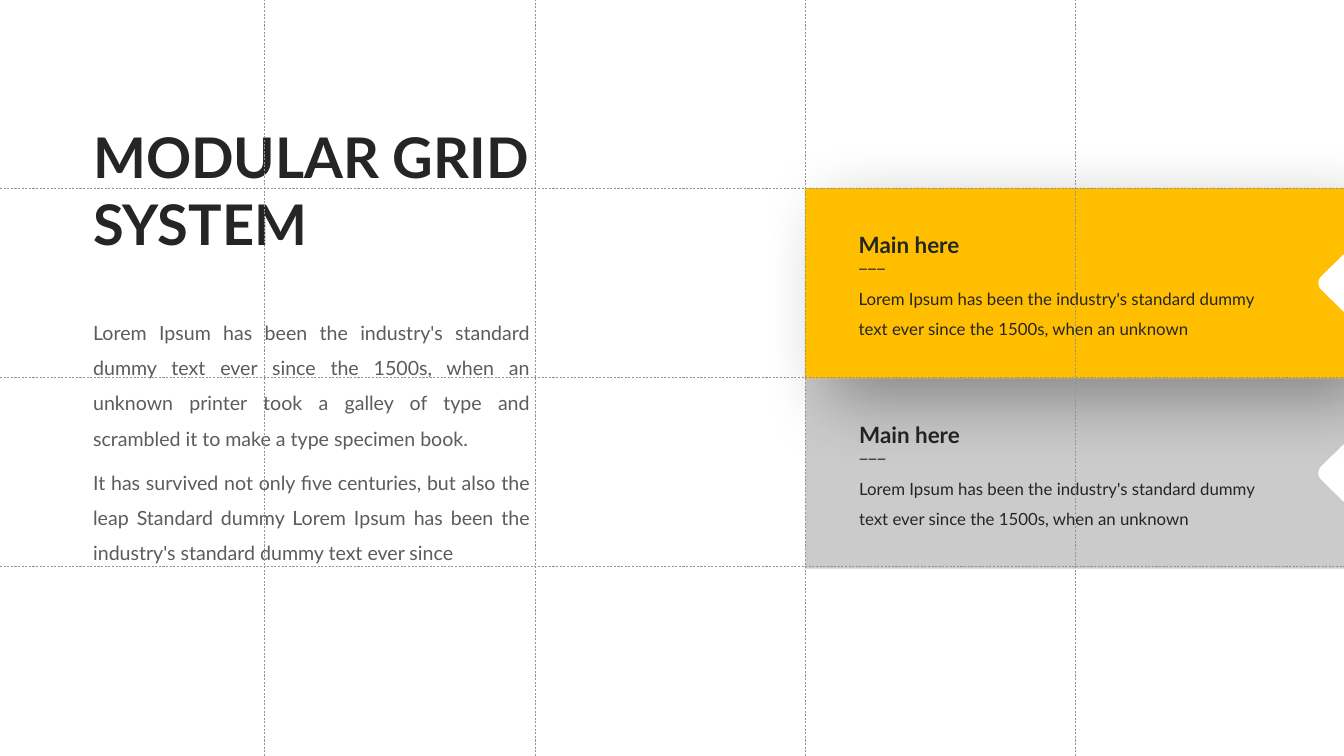
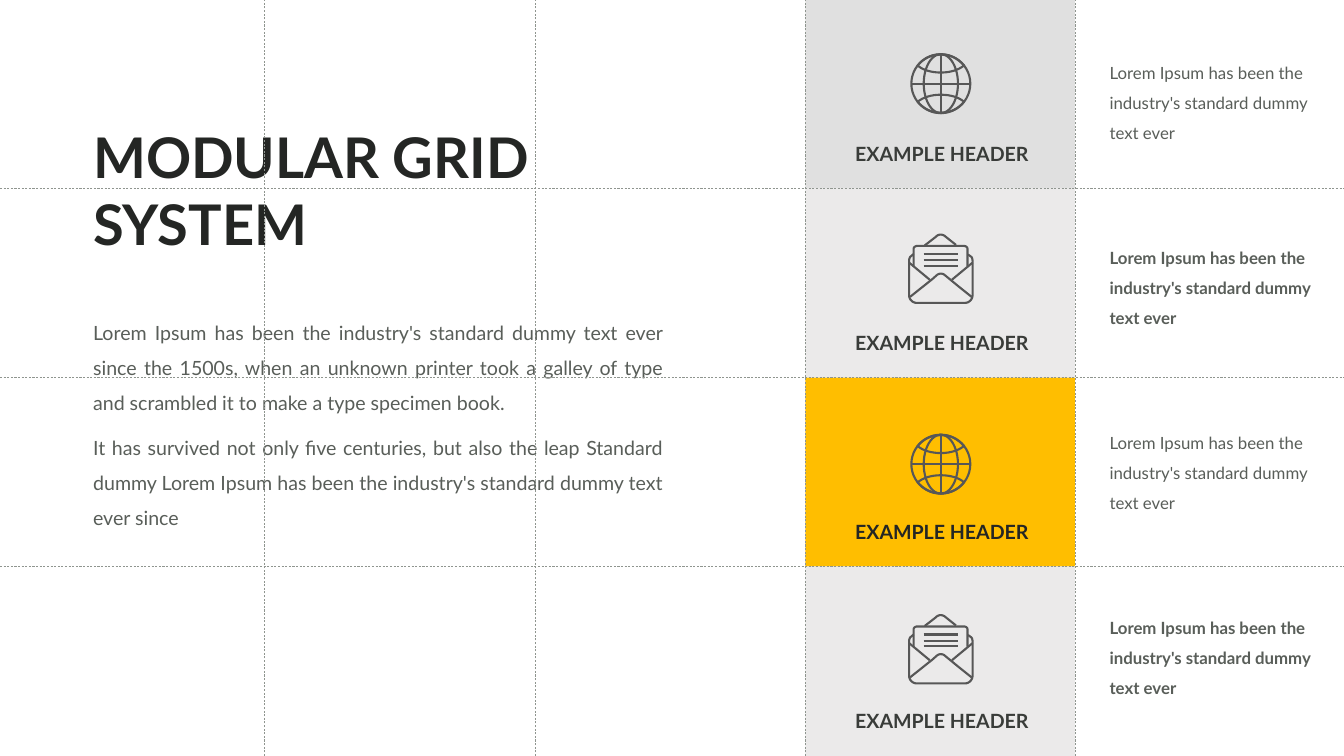
import pptx
import pptx.util
import pptx.dml.color
import pptx.enum.dml
import pptx.enum.shapes
import pptx.enum.text
from lxml import etree

Inches = pptx.util.Inches
Pt = pptx.util.Pt
MSO_SHAPE = pptx.enum.shapes.MSO_SHAPE
ALIGN = pptx.enum.text.PP_ALIGN
ANCHOR = pptx.enum.text.MSO_ANCHOR
DRAWING = "http://schemas.openxmlformats.org/drawingml/2006/main"

WIDTH, HEIGHT = 26.67, 15
FONT = "Lato"
COLORS = {
    "ink": "242624", "body": "595E59", "header": "393C39", "icon": "575757",
    "grid": "8F958F", "accent": "FFBE00", "card": "CCCBCB",
    "tile": "EBEAEA", "tile_top": "E0E0E0", "white": "FFFFFF", "shadow": "000000",
}
GRID_COLUMNS = [5.25, 10.62, 15.98, 21.34]
GRID_ROWS = [3.73, 7.49, 11.24]

TITLE = "MODULAR GRID SYSTEM"
BODY = [
    "Lorem Ipsum has been the industry's standard dummy text ever since the 1500s, "
    "when an unknown printer took a galley of type and scrambled it to make a type "
    "specimen book.",
    "It has survived not only five centuries, but also the leap Standard dummy Lorem "
    "Ipsum has been the industry's standard dummy text ever since",
]
CARD_HEADING = "Main here"
CARD_RULE = "___"
CARD_TEXT = ("Lorem Ipsum has been the industry's standard dummy text ever since "
             "the 1500s, when an unknown")
TILE_HEADER = "EXAMPLE HEADER"
TILE_TEXT = "Lorem Ipsum has been the industry's standard dummy text ever"

# left, top, fill, casts shadow; back to front
CARDS = [(15.98, 7.5, "card", False), (15.97, 3.73, "accent", True)]

# fill, header colour, icon, icon centre, bold side text
TILES = [
    ("tile_top", "header", "globe", 1.66, False),
    ("tile", "header", "envelope", 5.33, True),
    ("accent", "ink", "globe", 9.21, False),
    ("tile", "header", "envelope", 12.88, True),
]
ICON_X = 18.67

# Outlines around a centre: pairs are corners, sixes are Bezier curves
NOTCH = [(0, -0.57), (0, 0.58), (-0.44, 0.15), (-0.53, 0.07, -0.53, -0.06, -0.44, -0.14)]
ENVELOPE_OUTLINES = [
    [(0.54, -0.28), (0.61, -0.23), (0.61, -0.23, 0.63, -0.2, 0.63, -0.15), (0.63, 0.53),
     (0.63, 0.61, 0.56, 0.68, 0.48, 0.68), (-0.48, 0.68),
     (-0.56, 0.68, -0.63, 0.61, -0.63, 0.53), (-0.63, -0.15),
     (-0.63, -0.2, -0.61, -0.23, -0.61, -0.23), (-0.54, -0.29)],
    [(-0.32, -0.46), (-0.1, -0.63), (-0.05, -0.69, 0.04, -0.69, 0.1, -0.63), (0.3, -0.47)],
    [(-0.54, -0.04), (-0.54, -0.39), (-0.54, -0.43, -0.5, -0.45, -0.47, -0.45),
     (0.46, -0.45), (0.49, -0.45, 0.53, -0.43, 0.53, -0.39), (0.53, -0.05)],
    [(0.61, 0.56), (0.36, 0.36), (0.08, 0.13), (0.04, 0.09, -0.04, 0.09, -0.08, 0.13),
     (-0.17, 0.21), (-0.61, 0.56)],
]
ENVELOPE_LINES = [
    (0.63, -0.12, 0.22, 0.22), (-0.63, -0.12, -0.22, 0.22),
    (-0.34, -0.29, 0.34, -0.29), (-0.34, -0.17, 0.34, -0.17), (-0.34, -0.06, 0.34, -0.06),
]
GLOBE_CAP = [
    (-0.46, -0.36), (-0.36, -0.27, -0.19, -0.22, 0, -0.22),
    (0.19, -0.22, 0.35, -0.27, 0.46, -0.36), (0.35, -0.49, 0.19, -0.58, 0, -0.58),
    (-0.19, -0.58, -0.36, -0.49, -0.46, -0.36),
]
GLOBE_LINES = [(0, -0.57, 0, 0.57), (-0.57, 0, 0.57, 0)]
GLOBE_DIAMETERS = [1.17, 0.68]


def rgb(name):
    return pptx.dml.color.RGBColor.from_string(COLORS[name])


def add_effects(shape):
    properties = shape._element.spPr
    return etree.SubElement(properties, f"{{{DRAWING}}}effectLst")


def add_card_shadow(shape):
    effects = shape._element.spPr.find(f"{{{DRAWING}}}effectLst")
    shadow = etree.SubElement(
        effects, f"{{{DRAWING}}}outerShdw", blurRad=str(Pt(100)), dist=str(Pt(48)),
        dir=str(40 * 60000), algn="tl", rotWithShape="0")
    color = etree.SubElement(shadow, f"{{{DRAWING}}}srgbClr", val=COLORS["shadow"])
    etree.SubElement(color, f"{{{DRAWING}}}alpha", val="32000")


def style_shape(shape, fill=None):
    """Fill without a line, or an icon stroke without a fill."""
    shape.shadow.inherit = False
    if fill:
        shape.fill.solid()
        shape.fill.fore_color.rgb = rgb(fill)
        shape.line.fill.background()
    else:
        shape.fill.background()
        shape.line.color.rgb = rgb("icon")
        shape.line.width = Pt(3)


def add_block(slide, left, top, width, height, fill):
    block = slide.shapes.add_shape(MSO_SHAPE.ROUNDED_RECTANGLE, Inches(left), Inches(top),
                                   Inches(width), Inches(height))
    block.adjustments[0] = 0
    style_shape(block, fill)
    return block


def add_line(slide, x1, y1, x2, y2, color="icon", width=3):
    line = slide.shapes.add_connector(pptx.enum.shapes.MSO_CONNECTOR.STRAIGHT,
                                      Inches(x1), Inches(y1), Inches(x2), Inches(y2))
    line.line.color.rgb = rgb(color)
    line.line.width = Pt(width)
    add_effects(line)
    return line


def flatten(outline, steps=8):
    """Turn corners and Bezier curves into a list of points."""
    points = []
    for segment in outline:
        if len(segment) == 2:
            points.append(segment)
            continue
        start, controls = points[-1], (segment[:2], segment[2:4], segment[4:])
        for step in range(1, steps + 1):
            t = step / steps
            weights = ((1 - t) ** 3, 3 * t * (1 - t) ** 2, 3 * t * t * (1 - t), t ** 3)
            points.append(tuple(
                sum(weight * point[axis] for weight, point in zip(weights, (start, *controls)))
                for axis in (0, 1)))
    return points


def add_outline(slide, outline, x, y, fill=None, close=False):
    points = [(Inches(x + dx), Inches(y + dy)) for dx, dy in flatten(outline)]
    builder = slide.shapes.build_freeform(*points[0])
    builder.add_line_segments(points[1:], close=close)
    style_shape(builder.convert_to_shape(), fill)


def add_text(slide, box, paragraphs, anchor=ANCHOR.TOP):
    """Each paragraph is (text, size, colour, bold, line spacing, space before, alignment)."""
    frame = slide.shapes.add_textbox(*map(Inches, box)).text_frame
    frame.word_wrap = True
    frame.vertical_anchor = anchor
    for index, (text, size, color, bold, spacing, before, align) in enumerate(paragraphs):
        paragraph = frame.add_paragraph() if index else frame.paragraphs[0]
        paragraph.line_spacing = spacing
        paragraph.space_before = Pt(before)
        paragraph.alignment = align
        run = paragraph.add_run()
        run.text = text
        run.font.name = FONT
        run.font.size = Pt(size)
        run.font.bold = bold
        run.font.color.rgb = rgb(color)


def add_title_and_body(slide, body_width):
    add_text(slide, (1.75, 2.3, 8.86, 2.91),
             [(TITLE, 80, "ink", True, 1.0, 0, ALIGN.LEFT)], ANCHOR.MIDDLE)
    add_text(slide, (1.75, 6.08, body_width, 5.16),
             [(text, 28, "body", False, 1.5, 12.7, ALIGN.JUSTIFY) for text in BODY])


def add_grid(slide):
    lines = [(0, y, WIDTH, y) for y in GRID_ROWS]
    lines += [(x, HEIGHT, x, 0) for x in GRID_COLUMNS]
    for ends in lines:
        line = add_line(slide, *ends, "grid", 0.75)
        line.line.dash_style = pptx.enum.dml.MSO_LINE.DASH


def add_card(slide, left, top, fill, casts_shadow):
    block = add_block(slide, left, top, WIDTH - left, 3.78, fill)
    if casts_shadow:
        add_card_shadow(block)
    add_text(slide, (left + 0.97, top + 0.54, 8.51, 2.51), [
        (CARD_HEADING, 32, "ink", True, 1.5, 0, ALIGN.LEFT),
        (CARD_RULE, 28, "ink", False, 0.5, 0, ALIGN.LEFT),
        (CARD_TEXT, 24, "ink", False, 1.5, 12.6, ALIGN.LEFT),
    ])
    add_outline(slide, NOTCH, WIDTH, top + 1.88, "white", close=True)


def add_icon_lines(slide, lines, y):
    for x1, y1, x2, y2 in lines:
        add_line(slide, ICON_X + x1, y + y1, ICON_X + x2, y + y2)


def add_globe(slide, y):
    height = GLOBE_DIAMETERS[0]
    for width in GLOBE_DIAMETERS:
        style_shape(slide.shapes.add_shape(
            MSO_SHAPE.OVAL, Inches(ICON_X - width / 2), Inches(y - height / 2),
            Inches(width), Inches(height)))
    add_icon_lines(slide, GLOBE_LINES, y)
    lower_cap = [tuple(-value for value in segment) for segment in GLOBE_CAP]
    for cap in (GLOBE_CAP, lower_cap):
        add_outline(slide, cap, ICON_X, y, close=True)


def add_envelope(slide, y):
    for outline in ENVELOPE_OUTLINES:
        add_outline(slide, outline, ICON_X, y)
    add_icon_lines(slide, ENVELOPE_LINES, y)


ICONS = {"globe": add_globe, "envelope": add_envelope}


def build_cards_slide(slide):
    for card in CARDS:
        add_card(slide, *card)
    add_title_and_body(slide, 8.86)
    add_grid(slide)


def build_tiles_slide(slide):
    edges = [0, *GRID_ROWS, HEIGHT]
    for tile, top, bottom in zip(TILES, edges, edges[1:]):
        add_block(slide, GRID_COLUMNS[2], top, 5.35, bottom - top, tile[0])
    add_title_and_body(slide, 11.5)
    add_grid(slide)
    for index, (_, header_color, icon, icon_y, bold) in enumerate(TILES):
        add_text(slide, (21.92, 0.99 + 3.67 * index, 4.34, 1.87),
                 [(TILE_TEXT, 24, "body", bold, 1.5, 12.7, ALIGN.LEFT)])
        ICONS[icon](slide, icon_y)
        add_text(slide, (16.64, 2.54 + 3.75 * index, 4.1, 0.71),
                 [(TILE_HEADER, 28, header_color, True, 1.5, 12.7, ALIGN.CENTER)])


def main():
    presentation = pptx.Presentation()
    presentation.slide_width = Inches(WIDTH)
    presentation.slide_height = Inches(HEIGHT)
    for build in (build_cards_slide, build_tiles_slide):
        build(presentation.slides.add_slide(presentation.slide_layouts[6]))
    presentation.save("out.pptx")


if __name__ == "__main__":
    main()
